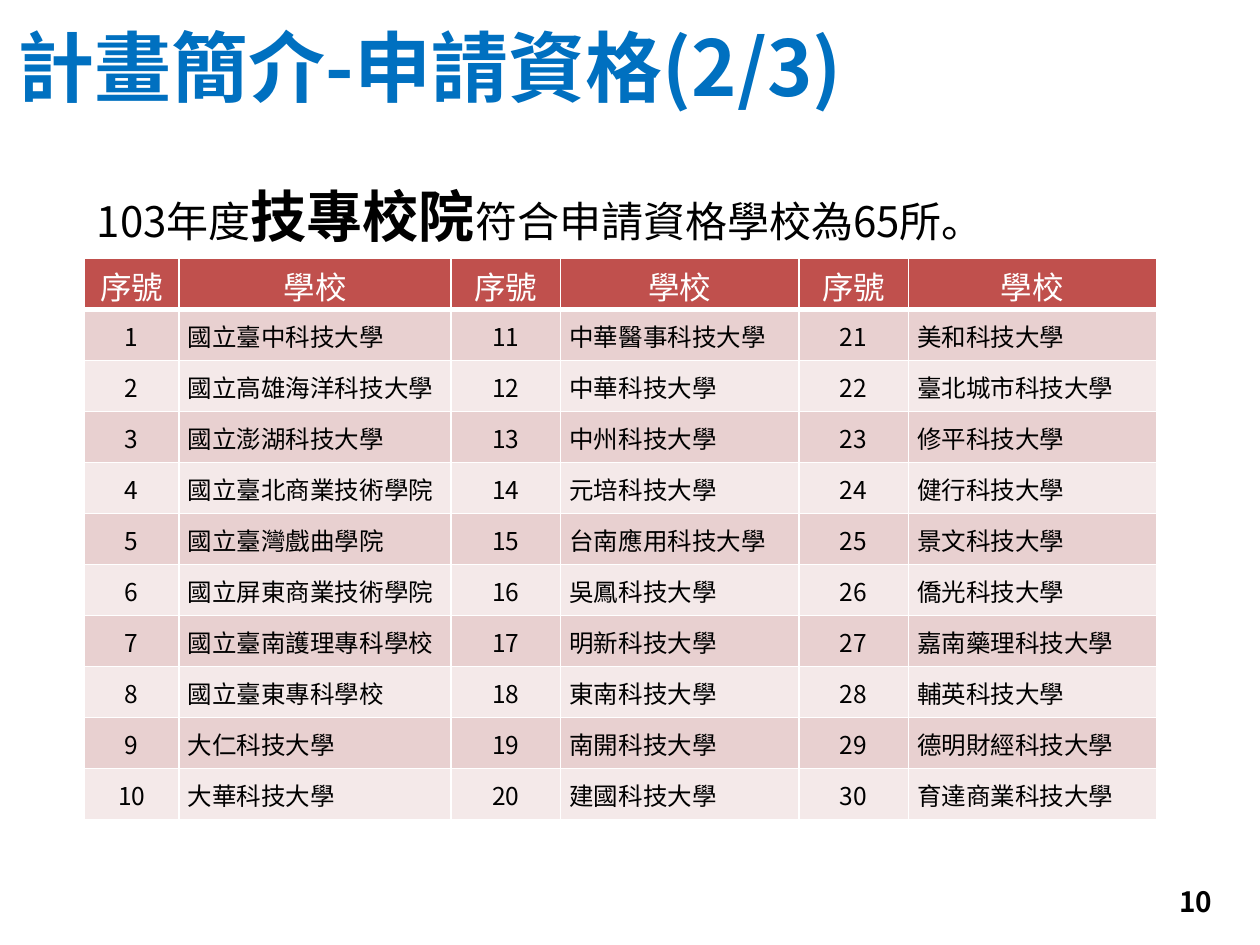
from dataclasses import dataclass

from lxml.etree import SubElement
from pptx import Presentation
from pptx.dml.color import RGBColor
from pptx.enum.text import MSO_ANCHOR, PP_ALIGN
from pptx.oxml.ns import qn
from pptx.util import Inches, Pt


@dataclass(frozen=True)
class Theme:
    font: str = "Noto Sans CJK SC"
    blue: str = "0070C0"
    black: str = "000000"
    white: str = "FFFFFF"
    header: str = "C0504D"
    bands: tuple = ("E8D0D0", "F4E9E9")
    title: int = 44
    emphasis: int = 32
    lead: int = 24
    heading: int = 18
    number: int = 16
    body: int = 14


theme = Theme()


def style(span, size, color, bold=False):
    font = span.font
    font.size, font.bold, font.name = Pt(size), bold, theme.font
    font.color.rgb = RGBColor.from_string(color)
    SubElement(font._element, qn("a:ea"), typeface=theme.font)


def draw_borders(cell, top, bottom):
    properties = cell._tc.get_or_add_tcPr()
    for side, width in (("L", 1), ("R", 1), ("T", top), ("B", bottom)):
        line = SubElement(properties, qn(f"a:ln{side}"), w=str(Pt(width)))
        fill = SubElement(line, qn("a:solidFill"))
        SubElement(fill, qn("a:srgbClr"), val=theme.white)


deck = Presentation()
deck.slide_width, deck.slide_height = Inches(10), Inches(7.5)
page = deck.slides.add_slide(deck.slide_layouts[5])

title = page.shapes.title
title.left, title.top = Inches(0.04), Inches(0.05)
title.width, title.height = Inches(9), Inches(0.94)
title.text_frame.text = "計畫簡介-申請資格(2/3)"
title.text_frame.vertical_anchor = MSO_ANCHOR.MIDDLE
para = title.text_frame.paragraphs[0]
para.alignment = PP_ALIGN.LEFT
style(para.runs[0], theme.title, theme.blue, True)

left, table_width = Inches(0.67), Inches(8.5)
lead = page.shapes.add_textbox(left, Inches(1.39), Inches(7.72), Inches(0.64))
lead.text_frame.word_wrap = True
for text, size, bold in (
    ("103年度", theme.lead, False),
    ("技專校院", theme.emphasis, True),
    ("符合申請資格學校為65所。", theme.lead, False),
):
    span = lead.text_frame.paragraphs[0].add_run()
    span.text = text
    style(span, size, theme.black, bold)

school_columns = (
    ("國立臺中科技大學", "國立高雄海洋科技大學", "國立澎湖科技大學", "國立臺北商業技術學院",
     "國立臺灣戲曲學院", "國立屏東商業技術學院", "國立臺南護理專科學校", "國立臺東專科學校",
     "大仁科技大學", "大華科技大學"),
    ("中華醫事科技大學", "中華科技大學", "中州科技大學", "元培科技大學", "台南應用科技大學",
     "吳鳳科技大學", "明新科技大學", "東南科技大學", "南開科技大學", "建國科技大學"),
    ("美和科技大學", "臺北城市科技大學", "修平科技大學", "健行科技大學", "景文科技大學",
     "僑光科技大學", "嘉南藥理科技大學", "輔英科技大學", "德明財經科技大學", "育達商業科技大學"),
)
per_column = len(school_columns[0])
rows = [["序號", "學校"] * len(school_columns)]
for index, schools in enumerate(zip(*school_columns)):
    row = []
    for group, school in enumerate(schools):
        row += [str(group * per_column + index + 1), school]
    rows.append(row)

column_widths = (0.75, 2.16, 0.87, 1.89, 0.87, 1.97)
table = page.shapes.add_table(
    len(rows), len(column_widths), left, Inches(2.05), table_width, Inches(4.46)
).table
for column, width in zip(table.columns, column_widths):
    column.width = Inches(width)

for row_index, row in enumerate(rows):
    is_header = row_index == 0
    for column_index, text in enumerate(row):
        is_school = column_index % 2 == 1
        cell = table.cell(row_index, column_index)
        draw_borders(cell, 3 if row_index == 1 else 1, 3 if is_header else 1)
        cell.fill.solid()
        band = theme.header if is_header else theme.bands[(row_index - 1) % 2]
        cell.fill.fore_color.rgb = RGBColor.from_string(band)
        cell.text_frame.text = text
        para = cell.text_frame.paragraphs[0]
        para.alignment = PP_ALIGN.LEFT if is_school and not is_header else PP_ALIGN.CENTER
        cell.margin_bottom = 0
        if is_header:
            cell.margin_top = Inches(0.04)
            style(para.runs[0], theme.heading, theme.white)
            continue
        cell.vertical_anchor = MSO_ANCHOR.MIDDLE
        cell.margin_left = cell.margin_right = Inches(0.07 if is_school else 0.01)
        cell.margin_top = Inches(0 if is_school else 0.01)
        if is_school:
            para.line_spacing = Pt(21)
        style(para.runs[0], theme.body, theme.black)

page_number = page.shapes.add_textbox(Inches(7.39), Inches(6.95), Inches(2.33), Inches(0.4))
page_number.text_frame.word_wrap = True
page_number.text_frame.vertical_anchor = MSO_ANCHOR.MIDDLE
page_number.text_frame.text = "10"
para = page_number.text_frame.paragraphs[0]
para.alignment = PP_ALIGN.RIGHT
style(para.runs[0], theme.number, theme.black, True)

deck.save("out.pptx")
